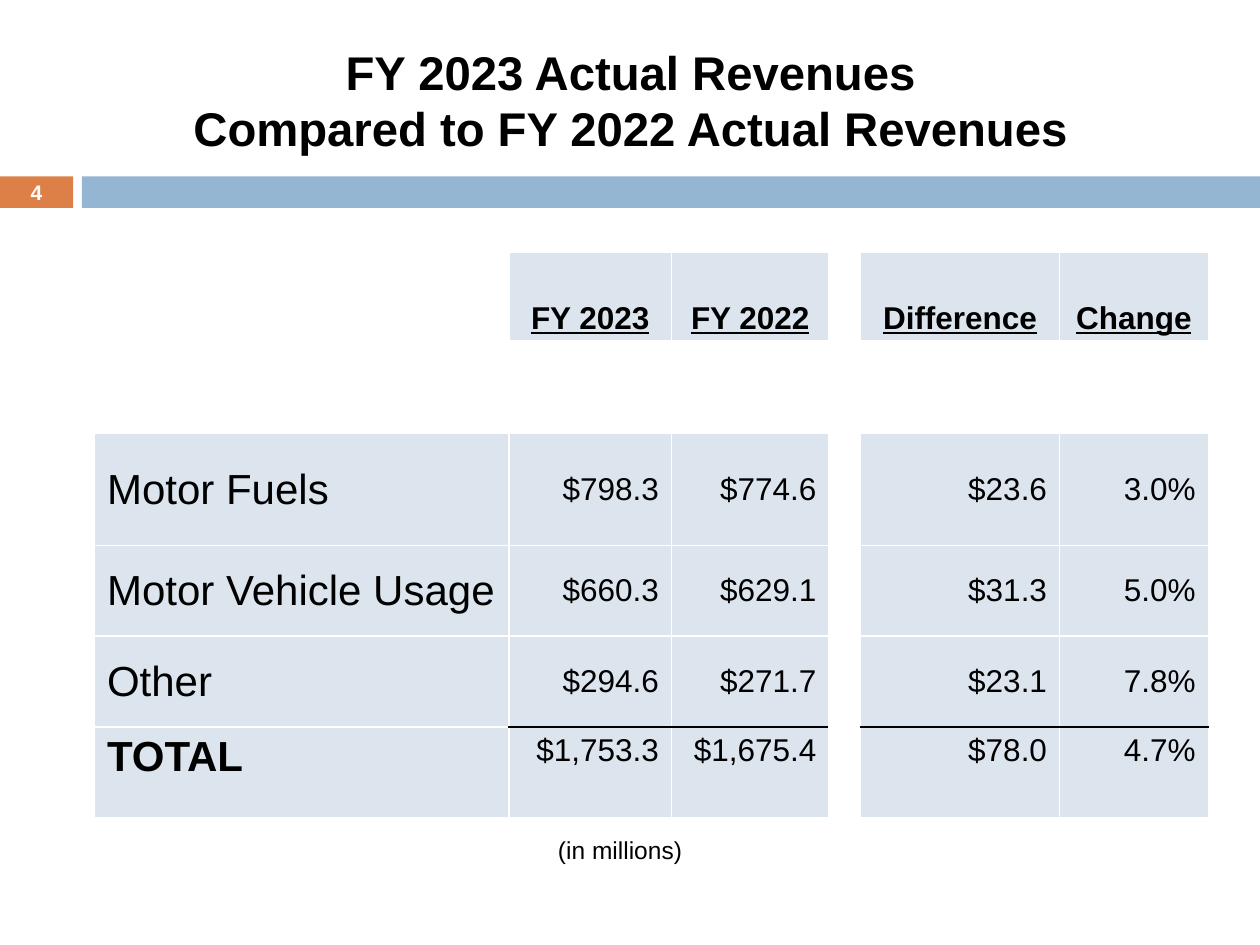
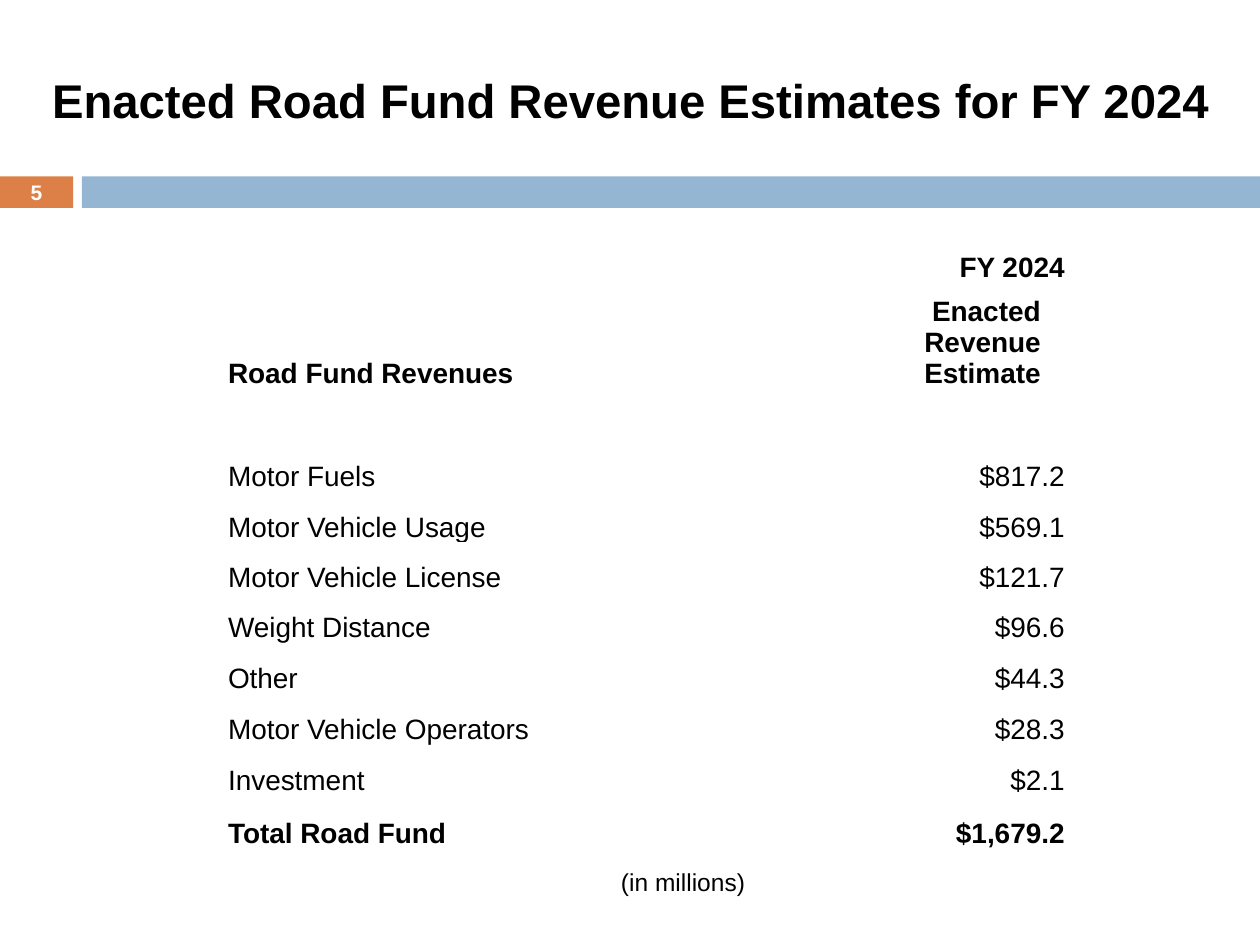
"""Builds two road fund revenue slides."""
from dataclasses import dataclass

from lxml.etree import SubElement as Sub
from pptx import Presentation
from pptx.dml.color import RGBColor as Rgb
from pptx.enum.shapes import MSO_SHAPE as Shape
from pptx.enum.text import MSO_ANCHOR as Anchor, PP_ALIGN as Align
from pptx.oxml.ns import qn
from pptx.util import Inches, Pt


@dataclass(frozen=True)
class Theme:
    """Colours and type sizes of the deck."""
    font: str = "Arial"
    black: str = "000000"
    white: str = "FFFFFF"
    orange: str = "DD8047"
    blue: str = "94B6D2"
    pale: str = "DCE5EE"
    title: float = 27
    label: float = 24
    value: float = 18
    listing: float = 16
    note: float = 14
    number: float = 12


THEME = Theme()
UNIT_NOTE = "(in millions)"
GAP_COLUMN = 3
COMPARISON = [
    ["", "FY 2023", "FY 2022", "", "Difference", "Change"],
    [""] * 6,
    ["Motor Fuels", "$798.3", "$774.6", "", "$23.6", "3.0%"],
    ["Motor Vehicle Usage", "$660.3", "$629.1", "", "$31.3", "5.0%"],
    ["Other", "$294.6", "$271.7", "", "$23.1", "7.8%"],
    ["TOTAL", "$1,753.3", "$1,675.4", "", "$78.0", "4.7%"],
]
ESTIMATES = [
    ("", "FY 2024"),
    ("Road Fund Revenues", "Enacted\nRevenue Estimate"),
    ("", ""),
    ("Motor Fuels", "$817.2"),
    ("Motor Vehicle Usage", "$569.1"),
    ("Motor Vehicle License", "$121.7"),
    ("Weight Distance", "$96.6"),
    ("Other", "$44.3"),
    ("Motor Vehicle Operators", "$28.3"),
    ("Investment", "$2.1"),
    ("Total Road Fund", "$1,679.2"),
]


def set_all(target, values):
    """Set each attribute named in a dict."""
    for name, value in values.items():
        setattr(target, name, value)


def style_para(para, text, size, align=Align.LEFT, color=THEME.black, **font):
    """Write text in a paragraph and format its runs."""
    para.text = text
    para.alignment = align
    for span in para.runs:
        set_all(span.font, {"name": THEME.font, "size": Pt(size), **font})
        span.font.color.rgb = Rgb.from_string(color)


def add_text(page, place, text, size, anchor=Anchor.TOP, inset=0.1, **style):
    """Add a text box."""
    box = page.shapes.add_textbox(*map(Inches, place))
    set_all(box.text_frame, {"word_wrap": True, "vertical_anchor": anchor,
                             "margin_left": Inches(inset), "margin_right": Inches(inset)})
    style_para(box.text_frame.paragraphs[0], text, size, **style)


def add_band(page, left, width, color):
    """Add one piece of the band below the title."""
    band = page.shapes.add_shape(Shape.RECTANGLE, *map(Inches, (left, 1.4, width, 0.25)))
    band.shadow.inherit = False
    band.fill.solid()
    band.fill.fore_color.rgb = Rgb.from_string(color)
    band.line.fill.background()


def add_page(deck, title, number):
    """Add a page with its band, title and number."""
    page = deck.slides.add_slide(deck.slide_layouts[6])
    add_band(page, 0, 0.58, THEME.orange)
    add_band(page, 0.65, 9.35, THEME.blue)
    add_text(page, (0.17, 0.25, 9.67, 1.08), title, THEME.title,
             Anchor.MIDDLE, align=Align.CENTER, bold=True)
    add_text(page, (0, 1.39, 0.58, 0.27), str(number), THEME.number,
             Anchor.MIDDLE, inset=0, align=Align.CENTER, color=THEME.white, bold=True)
    return page


def add_grid(page, left, top, widths, heights):
    """Add a table without header or banding."""
    place = map(Inches, (left, top, sum(widths), sum(heights)))
    table = page.shapes.add_table(len(heights), len(widths), *place).table
    set_all(table, {"first_row": False, "horz_banding": False})
    for column, width in zip(table.columns, widths):
        column.width = Inches(width)
    for row, height in zip(table.rows, heights):
        row.height = Inches(height)
    return table


def set_borders(cell, **changes):
    """Draw white cell borders, apart from the sides given as (colour, points)."""
    props = cell._tc.get_or_add_tcPr()
    for side in "LRTB":
        color, points = changes.get(side, (THEME.white, 1))
        line = Sub(props, qn(f"a:ln{side}"), w=str(Pt(points)))
        Sub(Sub(line, qn("a:solidFill")), qn("a:srgbClr"), val=color)


def fill_cell(cell, color=None):
    """Fill a cell, or leave it clear."""
    if color:
        cell.fill.solid()
        cell.fill.fore_color.rgb = Rgb.from_string(color)
    else:
        cell.fill.background()


def add_comparison(page):
    """Add the table that compares two years."""
    table = add_grid(page, 0.75, 2, [3.29, 1.29, 1.25, 0.25, 1.58, 1.18],
                     [0.72, 0.72, 0.89, 0.72, 0.72, 0.72])
    last = len(COMPARISON) - 1
    for r, texts in enumerate(COMPARISON):
        for c, text in enumerate(texts):
            cell = table.cell(r, c)
            sides = {"B": (THEME.white, 3)} if r == 0 else {}
            if c not in (0, GAP_COLUMN) and r >= last - 1:
                sides["T" if r == last else "B"] = (THEME.black, 1)
            set_borders(cell, **sides)
            fill_cell(cell, THEME.pale if text else None)
            cell.vertical_anchor = {0: Anchor.BOTTOM, last: Anchor.TOP}.get(r, Anchor.MIDDLE)
            para = cell.text_frame.paragraphs[0]
            if r == 0:
                style_para(para, text, THEME.value, Align.CENTER, bold=True, underline=True)
            elif c == 0:
                style_para(para, text, THEME.label, bold=r == last)
            else:
                style_para(para, text, THEME.value, Align.RIGHT)


def add_estimates(page):
    """Add the list of enacted estimates."""
    table = add_grid(page, 1.8, 1.83, [3.96, 1.49, 1.21],
                     [0.42, 0.84, 0.42] + [0.4] * 5 + [0.41, 0.4, 0.42])
    margins = {f"margin_{side}": Inches(0.01) for side in ("left", "right", "top")}
    for r, (label, amount) in enumerate(ESTIMATES):
        bold = r < 2 or r == len(ESTIMATES) - 1
        for c, text in enumerate((label, "", amount)):
            cell = table.cell(r, c)
            set_borders(cell)
            fill_cell(cell)
            set_all(cell, {**margins, "margin_bottom": 0, "vertical_anchor": Anchor.BOTTOM})
            cell.text_frame.text = text
            paras = cell.text_frame.paragraphs
            for para in paras:
                style_para(para, para.text, THEME.listing,
                           Align.RIGHT if c else Align.LEFT, bold=bold)
            if len(paras) > 1:
                paras[0]._p.get_or_add_pPr().set("marR", str(Inches(0.19)))


def main():
    """Build and save the deck."""
    deck = Presentation()
    set_all(deck, {"slide_width": Inches(10), "slide_height": Inches(7.5)})
    page = add_page(deck, "FY 2023 Actual Revenues\vCompared to FY 2022 Actual Revenues", 4)
    add_comparison(page)
    add_text(page, (4.33, 6.58, 1.75, 0.34), UNIT_NOTE, THEME.note)
    page = add_page(deck, "Enacted Road Fund Revenue Estimates for FY 2024", 5)
    add_estimates(page)
    add_text(page, (4.83, 6.83, 1.19, 0.34), UNIT_NOTE, THEME.note)
    deck.save("out.pptx")


if __name__ == "__main__":
    main()
